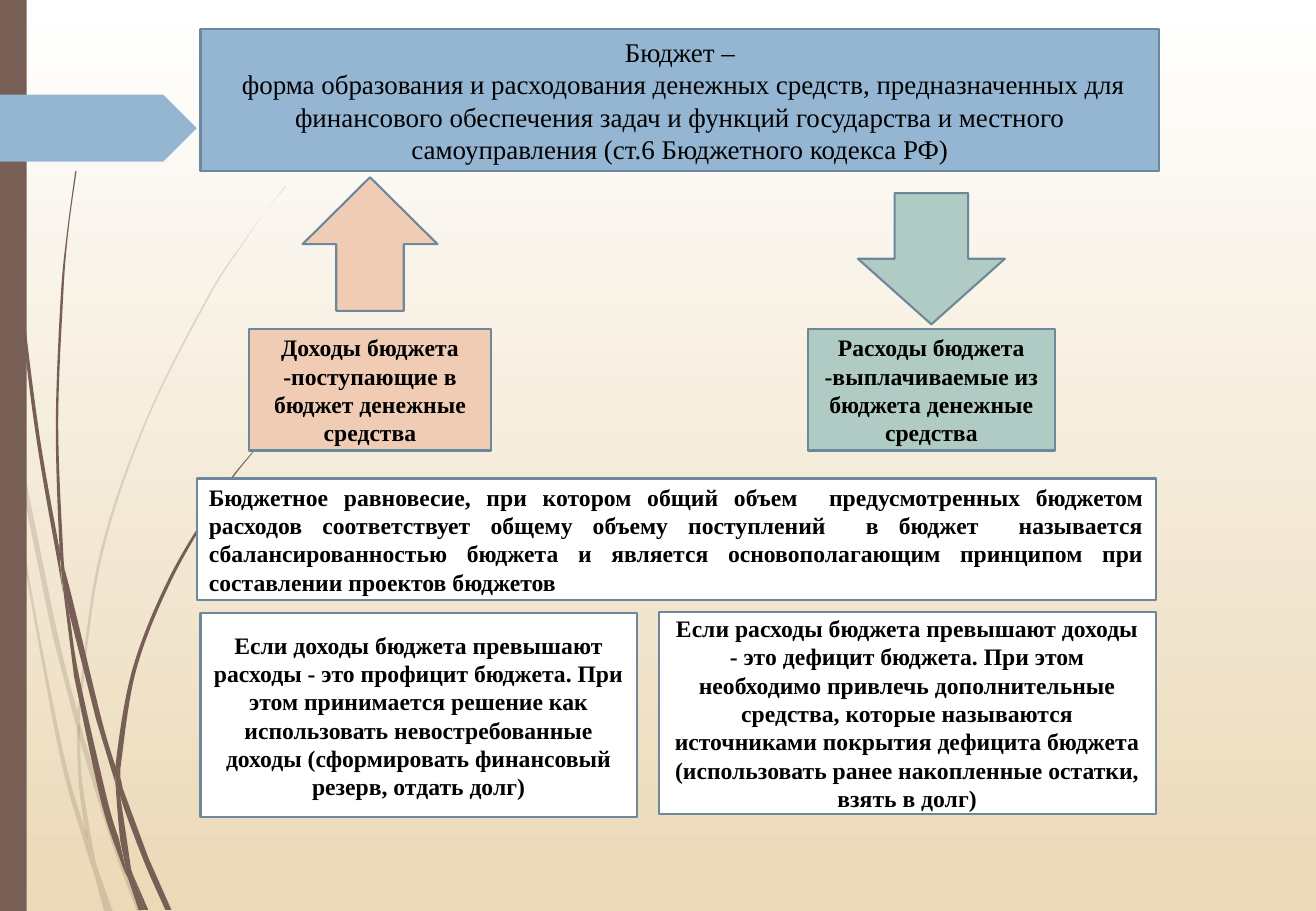
from pptx import Presentation
from pptx.dml.color import RGBColor
from pptx.enum.shapes import MSO_SHAPE as Shape
from pptx.enum.text import MSO_ANCHOR as Anchor, PP_ALIGN as Align
from pptx.oxml.ns import qn
from pptx.oxml.xmlchemy import OxmlElement
from pptx.util import Inches, Pt

COLUMNS, ROWS = 1083, 750
COLORS = {
    "white": "FFFFFF",
    "sand": "EBD9B7",
    "brown": "775F55",
    "blue": "94B6D2",
    "outline": "6D879B",
    "peach": "F1CCB5",
    "mint": "B0CAC4",
    "black": "000000",
}

PALE_BLADES = [
    ([(8, 350), (6, 322), (0, 282)], [(0, 299), (8, 344)]),
    ([(43, 522), (63, 599)], [(64, 586), (47, 520), (11, 345), (13, 376)]),
    ([(69, 607), (66, 596), (66, 610), (92, 694), (113, 751)], [(117, 751), (96, 692)]),
    ([(90, 751), (93, 751)], [(79, 711)]),
    ([(70, 683), (52, 619), (23, 469), (13, 376), (8, 350)],
     [(21, 470), (49, 621), (69, 693), (76, 714), (74, 707)]),
    ([(63, 599), (65, 646), (70, 683), (73, 692), (79, 711)],
     [(78, 706), (68, 646), (66, 610), (66, 608)]),
    ([(66, 584), (83, 462), (120, 349), (172, 245), (202, 198), (218, 175), (235, 154)],
     [(235, 153), (218, 175), (202, 197), (171, 244), (119, 348), (81, 461), (64, 584),
      (64, 586), (66, 596)]),
    ([(76, 714), (86, 751)], [(89, 751)]),
    ([(66, 608), (66, 610), (66, 596)], [(64, 586), (63, 599)]),
    ([(73, 692), (70, 683), (74, 707), (76, 714), (89, 751)], [(90, 751), (79, 711)]),
]
DARK_BLADES = [
    ([(6, 110), (15, 233), (29, 355), (50, 477), (51, 481)],
     [(49, 457), (49, 453), (32, 355), (17, 232), (7, 109), (4, 48), (3, 0), (2, 0), (3, 48)]),
    ([(79, 592), (95, 645)], [(95, 633), (95, 631), (83, 590), (54, 472), (57, 505)]),
    ([(101, 649), (99, 641), (99, 656), (118, 708), (136, 749)], [(141, 749), (122, 706)]),
    ([(98, 691), (88, 657), (65, 556), (57, 505), (51, 477)],
     [(61, 557), (83, 659), (99, 708), (105, 722), (104, 717)]),
    ([(54, 472), (52, 453), (48, 349), (52, 245), (56, 193), (63, 141)],
     [(62, 141), (55, 193), (50, 245), (46, 349), (49, 449), (53, 472)]),
    ([(119, 749), (122, 749)], [(109, 719)]),
    ([(51, 477), (57, 505)], [(54, 472), (53, 472), (49, 449), (49, 453)]),
    ([(99, 633), (112, 552), (142, 476), (183, 406), (207, 374), (220, 359), (234, 344)],
     [(233, 344), (220, 358), (207, 373), (182, 405), (140, 474), (109, 551), (95, 631),
      (99, 641)]),
    ([(105, 722), (114, 749)], [(117, 749)]),
    ([(95, 645), (99, 691), (104, 706), (109, 719)],
     [(108, 716), (99, 656), (97, 651)]),
    ([(95, 645), (97, 651), (99, 656)], [(99, 641), (95, 631), (95, 633)]),
    ([(104, 706), (99, 691), (104, 717), (105, 722), (117, 749)], [(119, 749), (109, 719)]),
]


class BudgetPage:
    font = "Times New Roman"
    border = Pt(1.25)

    def __init__(self, deck):
        self.page = deck.slides.add_slide(deck.slide_layouts[6])
        self.column = deck.slide_width / COLUMNS
        self.row = deck.slide_height / ROWS

    def color(self, name):
        return RGBColor.from_string(COLORS[name])

    def place(self, x, y):
        return round(x * self.column), round(y * self.row)

    def background(self, top, bottom):
        fill = self.page.background.fill
        fill.gradient()
        fill.gradient_angle = 270
        for stop, name in zip(fill.gradient_stops, (top, bottom)):
            stop.color.rgb = self.color(name)

    def paint(self, shape, fill, outline=None):
        shape.shadow.inherit = False
        shape.fill.solid()
        shape.fill.fore_color.rgb = self.color(fill)
        if outline:
            shape.line.color.rgb = self.color(outline)
            shape.line.width = self.border
        else:
            shape.line.fill.background()

    def blade(self, edges, opacity=100):
        first, second = edges
        corners = [self.place(x, y) for x, y in first + second]
        builder = self.page.shapes.build_freeform(*corners[0])
        builder.add_line_segments(corners[1:], close=True)
        shape = builder.convert_to_shape()
        self.paint(shape, "brown")
        self.bend(shape, len(first))
        if opacity < 100:
            alpha = OxmlElement("a:alpha")
            alpha.set("val", str(opacity * 1000))
            shape.element.spPr.find(qn("a:solidFill"))[0].append(alpha)

    def bend(self, shape, turn):
        outline = shape.element.xpath(".//a:path")[0]
        points = [(int(point.get("x")), int(point.get("y")))
                  for point in outline.iter(qn("a:pt"))]
        for end, line in enumerate(outline.findall(qn("a:lnTo")), 1):
            if end == turn:
                continue
            low, high = (0, turn - 1) if end < turn else (turn, len(points) - 1)
            before, start = points[max(end - 2, low)], points[end - 1]
            stop, after = points[end], points[min(end + 1, high)]
            leave = [s + (e - b) / 6 for b, s, e in zip(before, start, stop)]
            arrive = [e - (a - s) / 6 for s, e, a in zip(start, stop, after)]
            curve = OxmlElement("a:cubicBezTo")
            for x, y in (leave, arrive, stop):
                point = OxmlElement("a:pt")
                point.set("x", str(round(x)))
                point.set("y", str(round(y)))
                curve.append(point)
            outline.replace(line, curve)

    def figure(self, kind, area, fill, outline=None):
        left, top, width, height = area
        shape = self.page.shapes.add_shape(
            kind, *self.place(left, top), *self.place(width, height))
        self.paint(shape, fill, outline)
        return shape

    def text_box(self, area, fill, texts, size=14, bold=True, align=Align.CENTER):
        box = self.figure(Shape.RECTANGLE, area, fill, "outline")
        frame = box.text_frame
        frame.word_wrap = True
        frame.vertical_anchor = Anchor.MIDDLE
        for index, text in enumerate(texts):
            para = frame.add_paragraph() if index else frame.paragraphs[0]
            para.alignment = align
            span = para.add_run()
            span.text = text
            span.font.name = self.font
            span.font.size = Pt(size)
            span.font.bold = bold
            span.font.color.rgb = self.color("black")


def main():
    deck = Presentation()
    deck.slide_width, deck.slide_height = Inches(10.83), Inches(7.5)
    budget = BudgetPage(deck)
    budget.background("white", "sand")
    for edges in PALE_BLADES:
        budget.blade(edges, opacity=20)
    for edges in DARK_BLADES:
        budget.blade(edges)
    budget.figure(Shape.RECTANGLE, (0, 0, 22, ROWS), "brown")
    budget.figure(Shape.PENTAGON, (0, 78, 162, 55), "blue")

    budget.text_box((165, 24, 789, 117), "blue", [
        "Бюджет –",
        " форма образования и расходования денежных средств, предназначенных для "
        "финансового обеспечения задач и функций государства и местного "
        "самоуправления (ст.6 Бюджетного кодекса РФ)",
    ], size=16, bold=False)
    budget.figure(Shape.UP_ARROW, (249, 146, 111, 110), "peach", "outline")
    budget.figure(Shape.DOWN_ARROW, (706, 159, 121, 108), "mint", "outline")
    budget.text_box((162, 394, 789, 100), "white", [
        "Бюджетное равновесие, при котором общий объем  предусмотренных бюджетом "
        "расходов соответствует общему объему поступлений  в бюджет  называется "
        "сбалансированностью бюджета и является основополагающим принципом при "
        "составлении проектов бюджетов",
    ], align=Align.JUSTIFY)
    budget.text_box((165, 505, 359, 168), "white", [
        "Если доходы бюджета превышают расходы - это профицит бюджета. При этом "
        "принимается решение как использовать невостребованные доходы "
        "(сформировать финансовый резерв, отдать долг)",
    ])
    budget.text_box((542, 504, 409, 166), "white", [
        "Если расходы бюджета превышают доходы - это дефицит бюджета. При этом "
        "необходимо привлечь дополнительные средства, которые называются "
        "источниками покрытия дефицита бюджета (использовать ранее накопленные "
        "остатки, взять в долг)",
    ])
    budget.text_box((205, 271, 199, 100), "peach", [
        "Доходы бюджета -поступающие в бюджет денежные средства",
    ])
    budget.text_box((665, 271, 203, 100), "mint", [
        "Расходы бюджета -выплачиваемые из бюджета денежные средства",
    ])
    deck.save("out.pptx")


if __name__ == "__main__":
    main()
